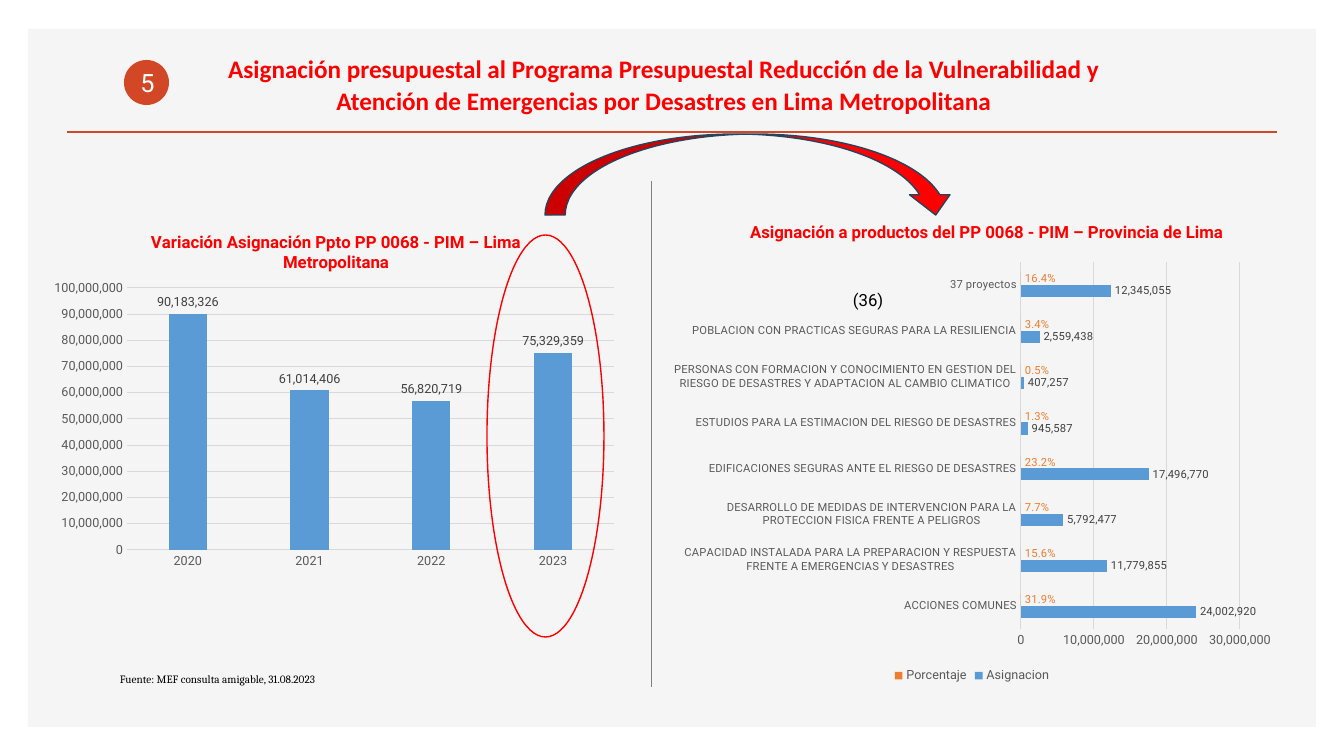
from lxml.etree import SubElement
from pptx import Presentation
from pptx.chart.data import CategoryChartData
from pptx.dml.color import RGBColor
from pptx.enum.chart import XL_CHART_TYPE as CHART, XL_LABEL_POSITION as LABEL
from pptx.enum.chart import XL_LEGEND_POSITION as LEGEND, XL_TICK_MARK as TICK
from pptx.enum.shapes import MSO_CONNECTOR as CONNECTOR, MSO_SHAPE as SHAPE
from pptx.enum.text import MSO_ANCHOR as ANCHOR, PP_ALIGN as ALIGN
from pptx.oxml import parse_xml
from pptx.oxml.ns import nsdecls, qn
from pptx.util import Pt

PX = 914400 / 100.8

PANEL = RGBColor(0xF5, 0xF5, 0xF5)
ACCENT = RGBColor(0xD2, 0x47, 0x26)
RED = RGBColor(0xFF, 0, 0)
NAVY = RGBColor(0x28, 0x44, 0x5D)
BLUE = RGBColor(0x5B, 0x9B, 0xD5)
ORANGE = RGBColor(0xED, 0x7D, 0x31)
GRID = RGBColor(0xD9, 0xD9, 0xD9)
DIVIDER = RGBColor(0x7F, 0x7F, 0x7F)
AXIS_TEXT = RGBColor(0x59, 0x59, 0x59)
LABEL_TEXT = RGBColor(0x40, 0x40, 0x40)
BLACK = RGBColor(0, 0, 0)
WHITE = RGBColor(0xFF, 0xFF, 0xFF)

HEADING = ("Asignación presupuestal al Programa Presupuestal Reducción de la Vulnerabilidad y "
           "Atención de Emergencias por Desastres en Lima Metropolitana")
SECTION = "5"
PROJECT_NOTE = "(36)"
SOURCE = "Fuente: MEF consulta amigable, 31.08.2023"

# Boxes are (left, top, width, height) in px; series are (name, values, format, bar, label).
YEARLY = dict(
    kind=CHART.COLUMN_CLUSTERED, box=(42, 212, 583, 365), plot_box=(127, 288, 487, 262),
    title="Variación Asignación Ppto PP 0068 - PIM – Lima Metropolitana", title_at=(148, 228),
    categories=["2020", "2021", "2022", "2023"],
    series=[("Asignación", [90183326, 61014406, 56820719, 75329359], "#,##0", BLUE, LABEL_TEXT)],
    gap=219, overlap=-27, top_value=100_000_000, category_size=9, label_size=9, legend=False)

PRODUCTS = [
    ("ACCIONES COMUNES", 24002920, 31.9),
    ("CAPACIDAD INSTALADA PARA LA PREPARACION Y RESPUESTA FRENTE A EMERGENCIAS Y DESASTRES",
     11779855, 15.6),
    ("DESARROLLO DE MEDIDAS DE INTERVENCION PARA LA PROTECCION FISICA FRENTE A PELIGROS",
     5792477, 7.7),
    ("EDIFICACIONES SEGURAS ANTE EL RIESGO DE DESASTRES", 17496770, 23.2),
    ("ESTUDIOS PARA LA ESTIMACION DEL RIESGO DE DESASTRES", 945587, 1.3),
    ("PERSONAS CON FORMACION Y CONOCIMIENTO EN GESTION DEL RIESGO DE DESASTRES "
     "Y ADAPTACION AL CAMBIO CLIMATICO", 407257, 0.5),
    ("POBLACION CON PRACTICAS SEGURAS PARA LA RESILIENCIA", 2559438, 3.4),
    ("37 proyectos", 12345055, 16.4),
]
names, amounts, shares = zip(*PRODUCTS)
BY_PRODUCT = dict(
    kind=CHART.BAR_CLUSTERED, box=(662, 207, 620, 480), plot_box=(1021, 262, 219, 367),
    title="Asignación a productos del PP 0068 - PIM – Provincia de Lima", title_at=(747, 218),
    categories=names,
    series=[("Asignacion", amounts, "#,##0", BLUE, LABEL_TEXT),
            ("Porcentaje", shares, '0.0"%"', ORANGE, ORANGE)],
    gap=182, overlap=0, top_value=30_000_000, category_size=8, label_size=8, legend=True)


def emu(lengths):
    return [round(length * PX) for length in lengths]


def set_font(font, size, color, name="Roboto", bold=False):
    font.size, font.name, font.bold = Pt(size), name, bold
    font.color.rgb = color


def add_text(shapes, box, text, size, color, name="Roboto", bold=False,
             align=ALIGN.LEFT, anchor=ANCHOR.TOP, spacing=None, after=0):
    frame = shapes.add_textbox(*emu(box)).text_frame
    frame.word_wrap = True
    frame.vertical_anchor = anchor
    paragraph = frame.paragraphs[0]
    paragraph.alignment = align
    paragraph.line_spacing = spacing
    paragraph.space_after = Pt(after)
    run = paragraph.add_run()
    run.text = text
    set_font(run.font, size, color, name, bold)


def add_shape(shapes, kind, box, fill=None, line=None):
    shape = shapes.add_shape(kind, *emu(box))
    shape.shadow.inherit = False
    if fill is None:
        shape.fill.background()
    else:
        shape.fill.solid()
        shape.fill.fore_color.rgb = fill
    if line is None:
        shape.line.fill.background()
    else:
        shape.line.color.rgb = line
        shape.line.width = Pt(1)


def add_line(shapes, ends, color, width):
    line = shapes.add_connector(CONNECTOR.STRAIGHT, *emu(ends))
    line.line.color.rgb = color
    line.line.width = Pt(width)
    SubElement(line._element.spPr, qn("a:effectLst"))


def place_in_chart(element, index, chart_box, values, inner=False):
    """Pin a chart part at slide px: x, y and, for the plot area, width and height."""
    left, top, width, height = chart_box
    offsets = (left, top, 0, 0)
    fractions = [(value - offset) / extent for value, offset, extent
                 in zip(values, offsets, (width, height) * 2)]
    tags = '<c:layoutTarget val="inner"/>' if inner else ""
    tags += '<c:xMode val="edge"/><c:yMode val="edge"/>'
    tags += "".join(f'<c:{tag} val="{part:.4f}"/>' for tag, part in zip("xywh", fractions))
    for old in element.findall(qn("c:layout")):
        element.remove(old)
    element.insert(index, parse_xml(
        f'<c:layout {nsdecls("c")}><c:manualLayout>{tags}</c:manualLayout></c:layout>'))


def add_budget_chart(shapes, kind, box, plot_box, title, title_at, categories, series,
                     gap, overlap, top_value, category_size, label_size, legend):
    data = CategoryChartData()
    data.categories = categories
    for name, values, number_format, _, _ in series:
        data.add_series(name, values, number_format)
    chart = shapes.add_chart(kind, *emu(box), data).chart
    set_font(chart.font, 10, BLACK)

    run = chart.chart_title.text_frame.paragraphs[0].add_run()
    run.text = title
    set_font(run.font, 12, RED, bold=True)
    chart.chart_title.include_in_layout = False
    place_in_chart(chart.chart_title._element, 1, box, title_at)
    place_in_chart(chart.element.find(".//" + qn("c:plotArea")), 0, box, plot_box, inner=True)

    for axis, size in ((chart.category_axis, category_size), (chart.value_axis, 9)):
        axis.major_tick_mark = axis.minor_tick_mark = TICK.NONE
        set_font(axis.tick_labels.font, size, AXIS_TEXT)
    chart.category_axis.format.line.color.rgb = GRID
    chart.category_axis.format.line.width = Pt(0.75)
    amount_axis = chart.value_axis
    amount_axis.minimum_scale, amount_axis.maximum_scale = 0, top_value
    amount_axis.major_unit = 10_000_000
    amount_axis.format.line.fill.background()
    amount_axis.major_gridlines.format.line.color.rgb = GRID
    amount_axis.major_gridlines.format.line.width = Pt(0.75)
    amount_axis.tick_labels.number_format = "#,##0"
    amount_axis.tick_labels.number_format_is_linked = False

    plot = chart.plots[0]
    plot.vary_by_categories = False
    plot.gap_width, plot.overlap = gap, overlap
    for bars, (_, _, number_format, bar_color, label_color) in zip(plot.series, series):
        bars.format.fill.solid()
        bars.format.fill.fore_color.rgb = bar_color
        labels = bars.data_labels
        labels.show_value = True
        labels.position = LABEL.OUTSIDE_END
        labels.number_format = number_format
        labels.number_format_is_linked = False
        set_font(labels.font, label_size, label_color)

    chart.has_legend = legend
    if legend:
        chart.legend.position = LEGEND.BOTTOM
        chart.legend.include_in_layout = False
        set_font(chart.legend.font, 9, AXIS_TEXT)


def main():
    deck = Presentation()
    deck.slide_width, deck.slide_height = emu((1344, 756))
    shapes = deck.slides.add_slide(deck.slide_layouts[6]).shapes

    add_shape(shapes, SHAPE.RECTANGLE, (28, 29, 1288, 698), fill=PANEL)
    add_line(shapes, (67, 132, 1277, 132), ACCENT, 2)
    add_budget_chart(shapes, **YEARLY)
    add_budget_chart(shapes, **BY_PRODUCT)
    add_line(shapes, (651, 181, 651, 687), DIVIDER, 0.5)
    add_shape(shapes, SHAPE.OVAL, (487, 235, 117, 402), line=RED)
    add_shape(shapes, SHAPE.CURVED_DOWN_ARROW, (545, 134, 411, 81), fill=RED, line=NAVY)
    add_text(shapes, (185, 40, 958, 81), HEADING, 18, RED, name="Calibri", bold=True,
             align=ALIGN.CENTER, anchor=ANCHOR.BOTTOM, spacing=1.07, after=8)

    badge = shapes.add_group_shape().shapes
    add_shape(badge, SHAPE.OVAL, (124, 60, 45, 45), fill=ACCENT)
    add_text(badge, (117, 62, 61, 40), SECTION, 18, WHITE, align=ALIGN.CENTER)

    add_text(shapes, (843, 285, 53, 30), PROJECT_NOTE, 12, BLACK)
    add_text(shapes, (110, 666, 392, 24), SOURCE, 8, BLACK, name="Cambria",
             align=ALIGN.JUSTIFY, spacing=1.07, after=8)
    deck.save("out.pptx")


if __name__ == "__main__":
    main()
